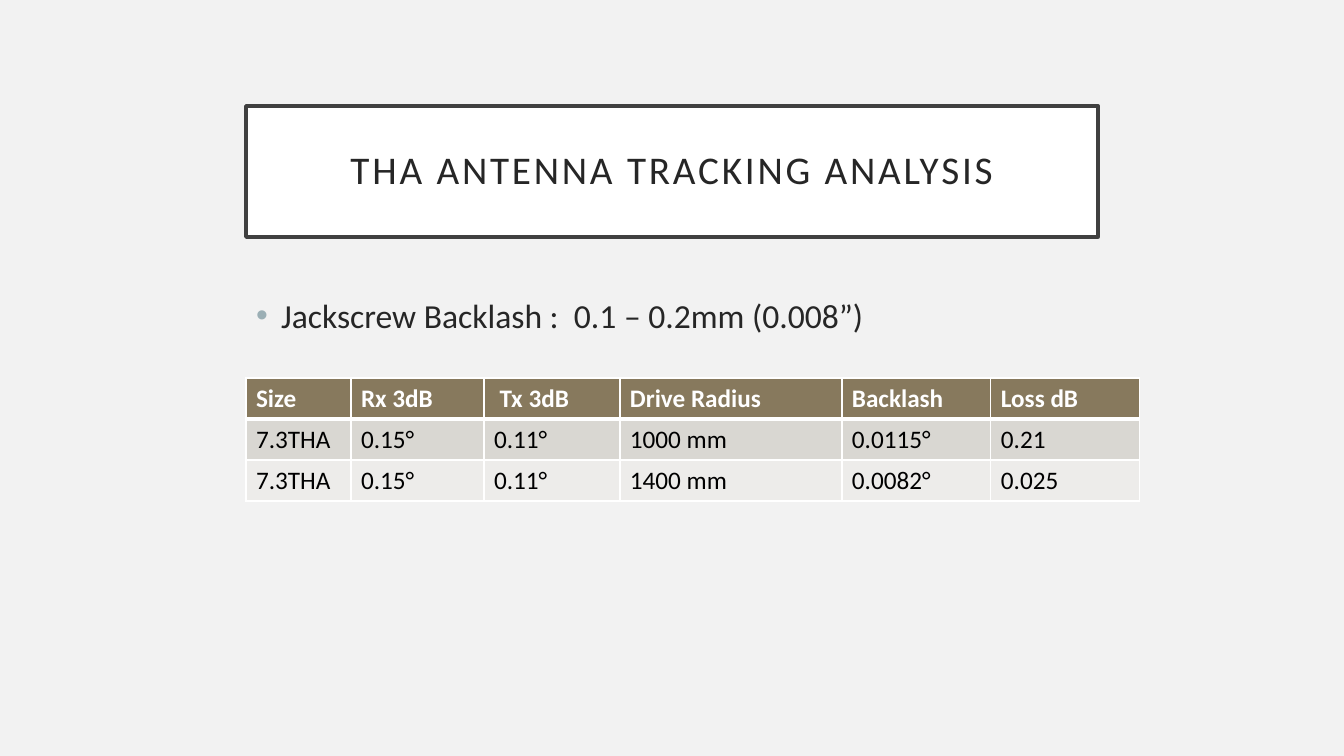
import dataclasses

import pptx
import pptx.dml.color
import pptx.enum.text
import pptx.oxml
import pptx.oxml.ns
import pptx.util

SCALE = 914400 / 100.8


@dataclasses.dataclass(frozen=True)
class Theme:
    font: str = "Calibri"
    back: str = "F2F2F2"
    white: str = "FFFFFF"
    black: str = "000000"
    text: str = "262626"
    frame: str = "404040"
    bullet: str = "9BAFB5"
    head: str = "87795D"
    bands: tuple = ("D9D7D2", "EDECEA")
    title: int = 28
    body: int = 24
    cell: int = 18


THEME = Theme()
COLS = (105, 133, 136, 222, 149, 149)
ROWS = (
    ("Size", "Rx 3dB", " Tx 3dB", "Drive Radius", "Backlash", "Loss dB"),
    ("7.3THA", "0.15°", "0.11°", "1000 mm", "0.0115°", "0.21"),
    ("7.3THA", "0.15°", "0.11°", "1400 mm", "0.0082°", "0.025"),
)
ROW_PX = 41


def px(count):
    return pptx.util.Emu(round(count * SCALE))


def paint(fill, color):
    fill.solid()
    fill.fore_color.rgb = pptx.dml.color.RGBColor.from_string(color)


def style(para, size, color, bold=False):
    font = para.font
    font.name = THEME.font
    font.size = pptx.util.Pt(size)
    font.bold = bold
    paint(font.fill, color)


def place(shape, left, top, width, height):
    shape.left, shape.top = px(left), px(top)
    shape.width, shape.height = px(width), px(height)


def add_xml(parent, tag, inner="", **attrs):
    space = pptx.oxml.ns.nsdecls("a")
    pairs = " ".join(f'{key}="{value}"' for key, value in attrs.items())
    node = pptx.oxml.parse_xml(f"<a:{tag} {space} {pairs}>{inner}</a:{tag}>")
    parent.append(node)


def set_title(shape, text):
    place(shape, 246, 106, 852, 131)
    paint(shape.fill, THEME.white)
    paint(shape.line.fill, THEME.frame)
    shape.line.width = pptx.util.Pt(2.5)
    frame = shape.text_frame
    frame.text = text
    frame.auto_size = pptx.enum.text.MSO_AUTO_SIZE.NONE
    frame.vertical_anchor = pptx.enum.text.MSO_ANCHOR.MIDDLE
    frame.margin_left = frame.margin_right = px(20)
    frame.margin_top = frame.margin_bottom = px(20)
    para = frame.paragraphs[0]
    para.alignment = pptx.enum.text.PP_ALIGN.CENTER
    para.line_spacing = 0.9
    style(para, THEME.title, THEME.text)
    para.runs[0].font._element.set("spc", "200")


def set_list(shape, text):
    place(shape, 246, 290, 916, 342)
    frame = shape.text_frame
    frame.text = text
    frame.auto_size = pptx.enum.text.MSO_AUTO_SIZE.NONE
    para = frame.paragraphs[0]
    para.space_before = pptx.util.Pt(10)
    props = para._p.get_or_add_pPr()
    props.set("marL", str(px(25)))
    props.set("indent", str(px(-25)))
    add_xml(props, "buClr", f'<a:srgbClr val="{THEME.bullet}"/>')
    add_xml(props, "buFont", typeface="Arial")
    add_xml(props, "buChar", char="•")
    style(para, THEME.body, THEME.text)


def set_cell(cell, text, row):
    head = row == 0
    cell.text = text
    color = THEME.white if head else THEME.black
    style(cell.text_frame.paragraphs[0], THEME.cell, color, head)
    props = cell._tc.get_or_add_tcPr()
    ink = f'<a:solidFill><a:srgbClr val="{THEME.white}"/></a:solidFill>'
    for side in "LRTB":
        thick = (head and side == "B") or (row == 1 and side == "T")
        width = pptx.util.Pt(3 if thick else 1)
        add_xml(props, f"ln{side}", ink, w=width)
    paint(cell.fill, THEME.head if head else THEME.bands[(row - 1) % 2])


def add_grid(slide):
    height = ROW_PX * len(ROWS)
    shape = slide.shapes.add_table(
        len(ROWS), len(COLS), px(246), px(378), px(sum(COLS)), px(height)
    )
    table = shape.table
    for column, width in zip(table.columns, COLS):
        column.width = px(width)
    for row, texts in enumerate(ROWS):
        table.rows[row].height = px(ROW_PX)
        for col, text in enumerate(texts):
            set_cell(table.cell(row, col), text, row)


def main():
    deck = pptx.Presentation()
    deck.slide_width, deck.slide_height = px(1344), px(756)
    slide = deck.slides.add_slide(deck.slide_layouts[1])
    paint(slide.background.fill, THEME.back)
    set_title(slide.shapes.title, "THA ANTENNA TRACKING ANALYSIS")
    set_list(slide.placeholders[1], "Jackscrew Backlash :  0.1 – 0.2mm (0.008”)")
    add_grid(slide)
    deck.save("out.pptx")


if __name__ == "__main__":
    main()
